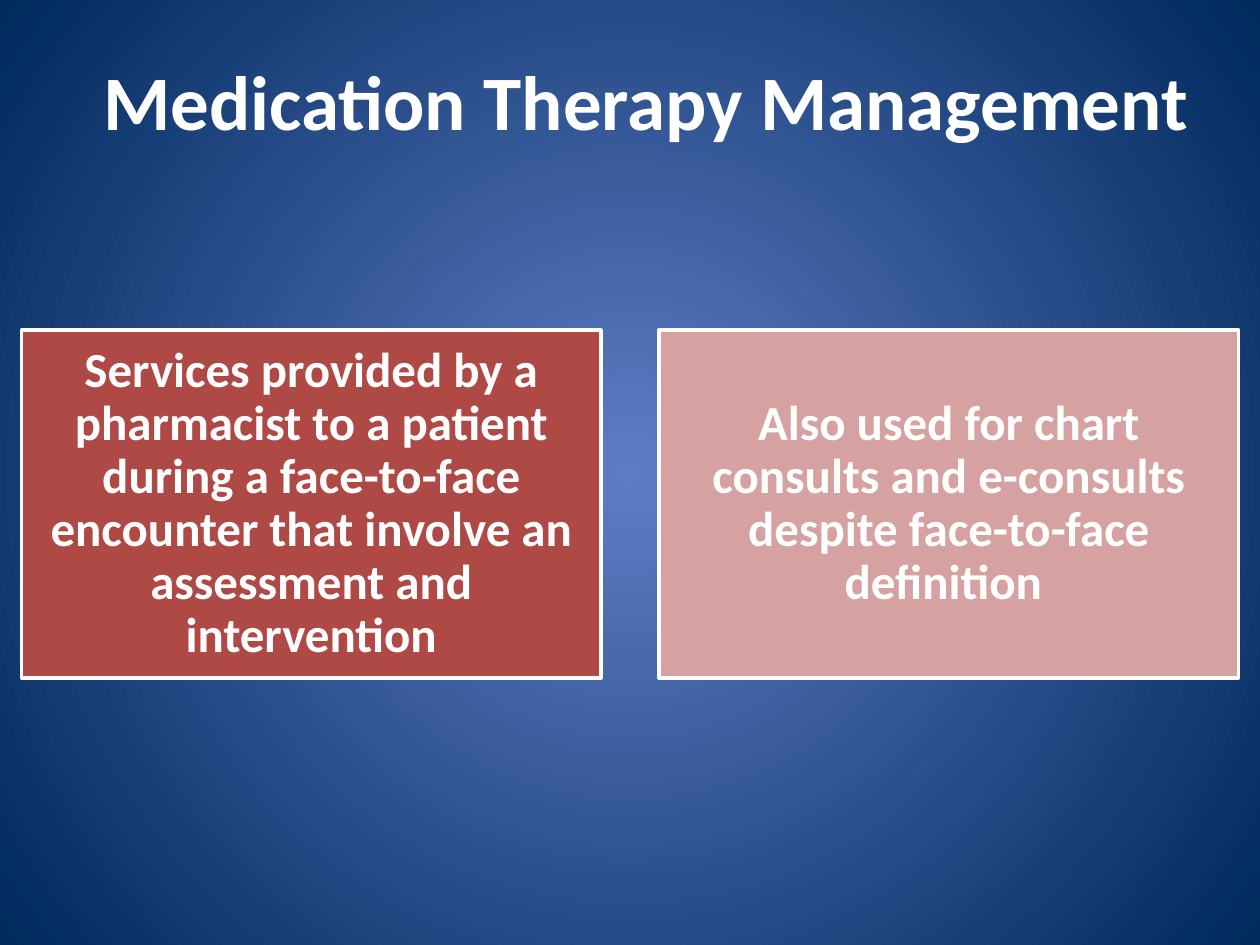
from dataclasses import dataclass

from pptx import Presentation
from pptx.dml.color import RGBColor as RGB
from pptx.enum.shapes import MSO_SHAPE as Shape
from pptx.enum.text import MSO_ANCHOR as Anchor, PP_ALIGN as Align
from pptx.oxml.ns import qn
from pptx.util import Pt

TITLE = "Medication Therapy Management"
CARDS = [
    ("Services provided by a pharmacist to a patient during a face-to-face "
     "encounter that involve an assessment and intervention", "AE4946"),
    ("Also used for chart consults and e-consults despite face-to-face "
     "definition ", "D6A2A1"),
]


@dataclass(frozen=True)
class Theme:
    font: str = "Calibri"
    ink: str = "FFFFFF"
    glow: str = "5E7CC5"
    edge: str = "00295C"
    head: int = 44
    body: int = 28


THEME = Theme()
WIDE, HIGH = 720, 540
CARD_W, CARD_H = 331.2, 198.72
SIDE, TOP = 12.24, 188.64
INSET = 8.64


def paint(slide):
    """Fill the background with a glow that darkens from the centre."""
    fill = slide.background.fill
    fill.gradient()
    for stop, tone in zip(fill.gradient_stops, (THEME.glow, THEME.edge)):
        stop.color.rgb = RGB.from_string(tone)
    grad = next(slide.element.iter(qn("a:gradFill")))
    grad.remove(grad.find(qn("a:lin")))
    ring = grad.makeelement(qn("a:path"), {"path": "circle"})
    rect = grad.makeelement(qn("a:fillToRect"), {s: "50000" for s in "ltrb"})
    ring.append(rect)
    grad.append(ring)


def write(frame, text, size):
    frame.text = text
    frame.word_wrap = True
    frame.vertical_anchor = Anchor.MIDDLE
    para = frame.paragraphs[0]
    para.alignment = Align.CENTER
    font = para.runs[0].font
    font.name, font.size, font.bold = THEME.font, Pt(size), True
    font.color.rgb = RGB.from_string(THEME.ink)
    return para


def add_card(slide, left, text, tone):
    card = slide.shapes.add_shape(
        Shape.RECTANGLE, Pt(left), Pt(TOP), Pt(CARD_W), Pt(CARD_H))
    card.shadow.inherit = False
    card.fill.solid()
    card.fill.fore_color.rgb = RGB.from_string(tone)
    card.line.color.rgb = RGB.from_string(THEME.ink)
    card.line.width = Pt(2)
    frame = card.text_frame
    frame.margin_left = frame.margin_right = Pt(INSET)
    frame.margin_top = frame.margin_bottom = Pt(INSET)
    write(frame, text, THEME.body).line_spacing = 0.9


def main():
    deck = Presentation()
    deck.slide_width, deck.slide_height = Pt(WIDE), Pt(HIGH)
    slide = deck.slides.add_slide(deck.slide_layouts[5])
    paint(slide)

    step = (WIDE - 2 * SIDE - CARD_W) / (len(CARDS) - 1)
    for i, (text, tone) in enumerate(CARDS):
        add_card(slide, SIDE + i * step, text, tone)

    title = slide.shapes.title
    title.left, title.top = Pt(48.24), Pt(18)
    title.width, title.height = Pt(642.24), Pt(77.76)
    write(title.text_frame, TITLE, THEME.head)
    deck.save("out.pptx")


if __name__ == "__main__":
    main()
